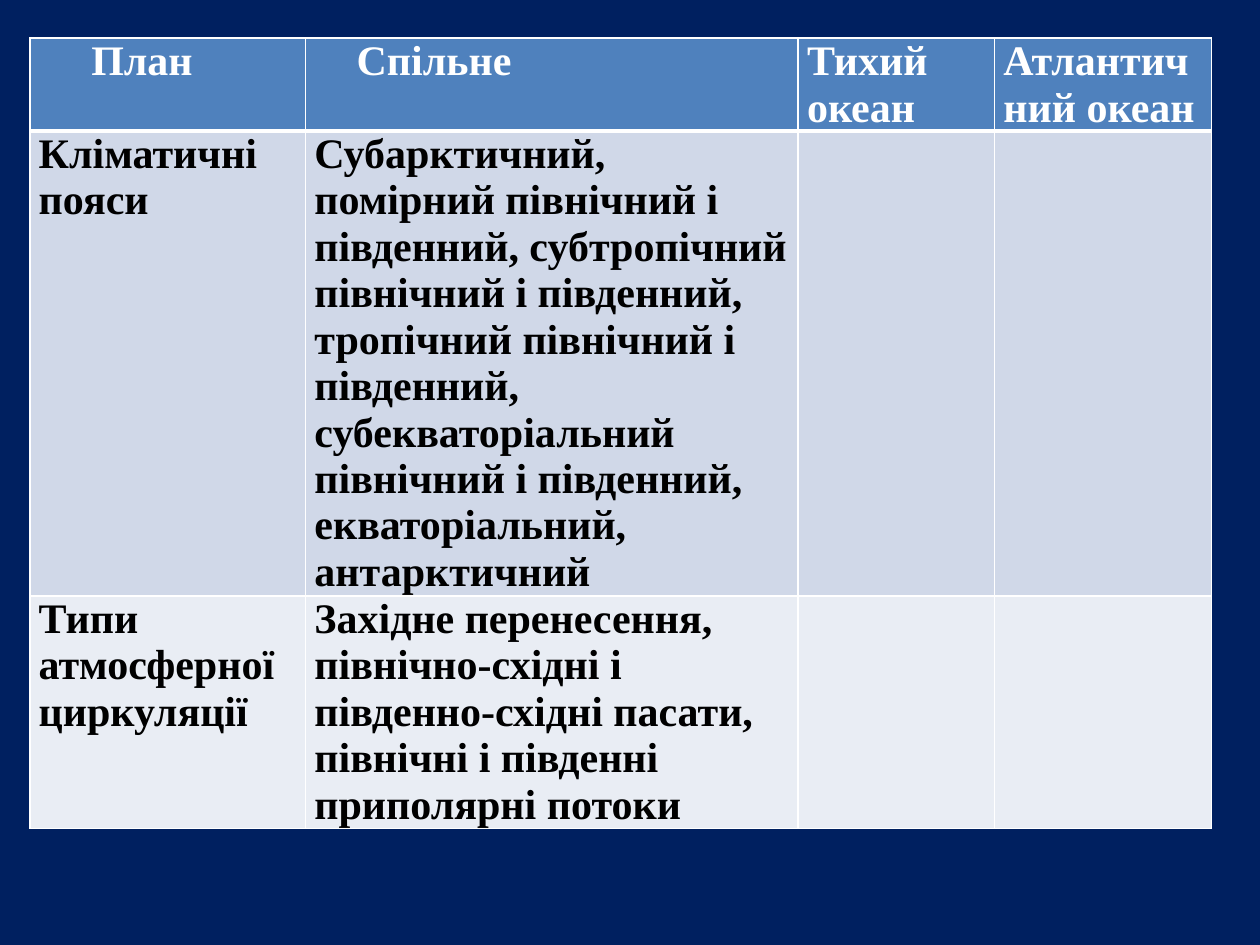
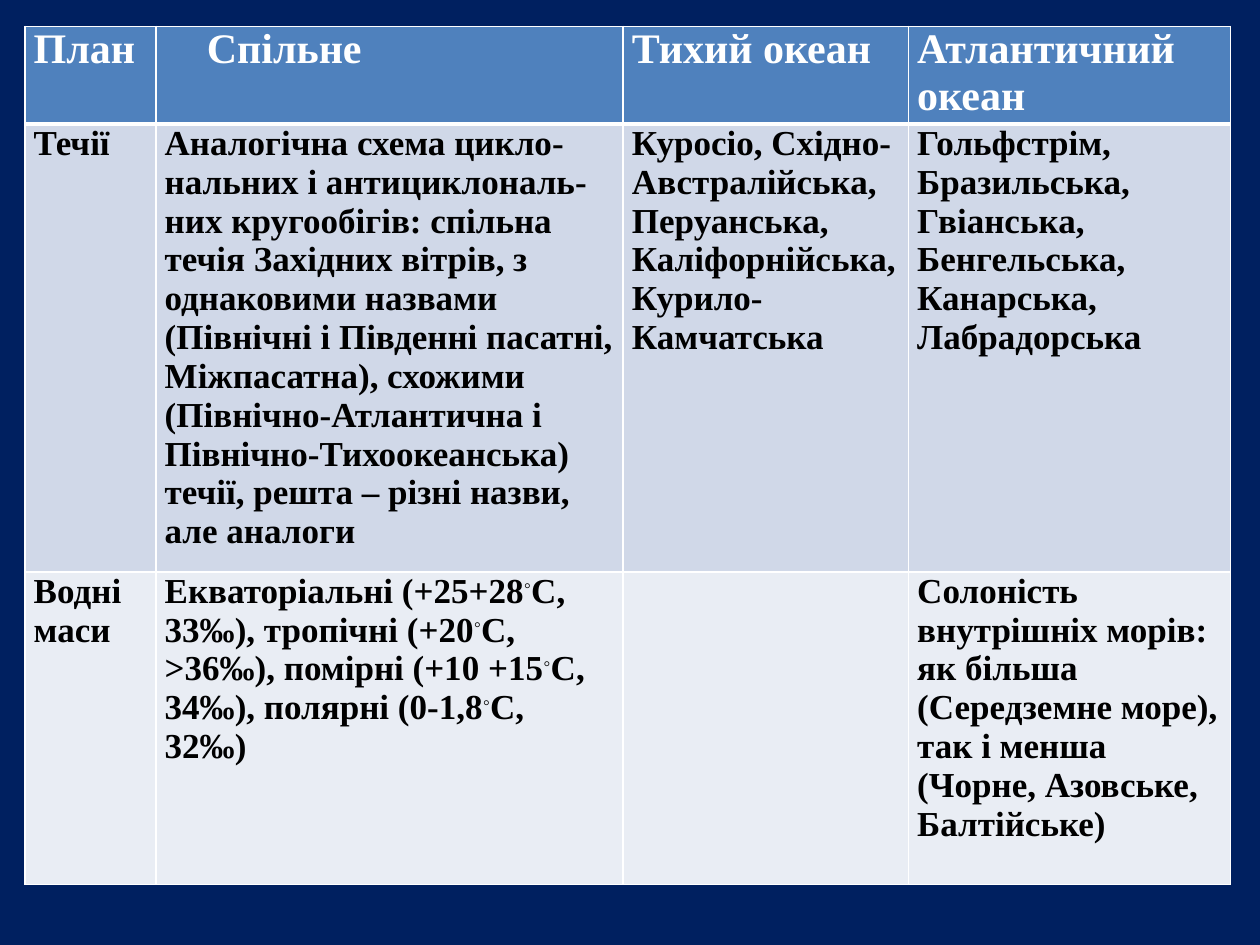
from lxml.etree import SubElement
from pptx import Presentation
from pptx.dml.color import RGBColor
from pptx.oxml.ns import qn
from pptx.util import Cm, Pt

FONT = "Times New Roman"
NAVY, BLUE, WHITE, BLACK = "002060", "4F81BD", "FFFFFF", "000000"
BANDS = ["D0D8E8", "E9EDF4"]
HEADINGS = ["План", "Спільне", "Тихий океан", "Атлантичний океан"]
HEADING_SIZE = 24
DEGREE = "◦"

CLIMATE_ROWS = [
    ["Кліматичні пояси",
     "Субарктичний, помірний північний і південний, субтропічний північний і "
     "південний, тропічний північний і південний, субекваторіальний північний "
     "і південний, екваторіальний, антарктичний", "", ""],
    ["Типи атмосферної циркуляції",
     "Західне перенесення, північно-східні і південно-східні пасати, "
     "північні і південні приполярні потоки", "", ""],
]
WATER_ROWS = [
    ["Течії",
     "Аналогічна схема цикло-нальних і антициклональ-них кругообігів: спільна "
     "течія Західних вітрів, з однаковими назвами (Північні і Південні "
     "пасатні, Міжпасатна), схожими  (Північно-Атлантична і "
     "Північно-Тихоокеанська) течії, решта – різні назви, але аналоги",
     "Куросіо, Східно-Австралійська, Перуанська, Каліфорнійська, "
     "Курило-Камчатська",
     "Гольфстрім, Бразильська, Гвіанська, Бенгельська, Канарська, "
     "Лабрадорська"],
    ["Водні маси",
     "Екваторіальні (+25+28◦С, 33‰), тропічні (+20◦С, >36‰), "
     "помірні (+10 +15◦С, 34‰), полярні (0-1,8◦С, 32‰)",
     "",
     "Солоність внутрішніх морів: як більша (Середземне море), так і менша "
     "(Чорне, Азовське, Балтійське)"],
]


def rgb(value):
    return RGBColor.from_string(value)


def write(cell, text, size=20, color=BLACK, indent=0):
    """Write bold text into a cell, raising each degree sign."""
    paragraph = cell.text_frame.paragraphs[0]
    if indent:
        paragraph._p.get_or_add_pPr().set("marL", str(Cm(indent)))
    for index, part in enumerate(text.split(DEGREE)):
        pieces = [part] if index == 0 else [DEGREE, part]
        for piece in pieces:
            run = paragraph.add_run()
            run.text = piece
            run.font.name = FONT
            run.font.size = Pt(size)
            run.font.bold = True
            run.font.color.rgb = rgb(color)
            if piece == DEGREE:
                run._r.get_or_add_rPr().set("baseline", "30000")


def paint(cell, fill, top=1, bottom=1):
    """Set a cell's margins, white borders (widths in points) and fill."""
    cell.margin_left = cell.margin_right = Cm(0.18)
    cell.margin_top = cell.margin_bottom = 0
    properties = cell._tc.get_or_add_tcPr()
    for side, width in (("L", 1), ("R", 1), ("T", top), ("B", bottom)):
        line = SubElement(properties, qn(f"a:ln{side}"), w=str(Pt(width)))
        solid = SubElement(line, qn("a:solidFill"))
        SubElement(solid, qn("a:srgbClr"), val=WHITE)
    cell.fill.solid()
    cell.fill.fore_color.rgb = rgb(fill)


def add_comparison(slide, body, left, top, widths, heights, size, indents):
    """Add a table that compares the two oceans under the shared headings."""
    table = slide.shapes.add_table(
        len(body) + 1, len(HEADINGS), Cm(left), Cm(top),
        Cm(sum(widths)), Cm(sum(heights))).table
    for column, width in zip(table.columns, widths):
        column.width = Cm(width)
    for row, height in zip(table.rows, heights):
        row.height = Cm(height)

    for column, (heading, indent) in enumerate(zip(HEADINGS, indents)):
        cell = table.cell(0, column)
        paint(cell, BLUE, bottom=3)
        write(cell, heading, size=HEADING_SIZE, color=WHITE, indent=indent)
    for row, (texts, band) in enumerate(zip(body, BANDS), start=1):
        for column, text in enumerate(texts):
            cell = table.cell(row, column)
            paint(cell, band, top=3 if row == 1 else 1)
            if text:
                write(cell, text, size=size)


def add_navy_slide(deck):
    slide = deck.slides.add_slide(deck.slide_layouts[6])
    slide.background.fill.solid()
    slide.background.fill.fore_color.rgb = rgb(NAVY)
    return slide


def main():
    deck = Presentation()
    deck.slide_width, deck.slide_height = Cm(25.4), Cm(19.05)
    add_comparison(add_navy_slide(deck), CLIMATE_ROWS, left=0.6, top=0.77,
                   widths=[5.56, 9.93, 3.96, 4.37],
                   heights=[1.87, 9.37, 4.69],
                   size=24, indents=[1.06, 0.85, 0, 0])
    add_comparison(add_navy_slide(deck), WATER_ROWS, left=0.5, top=0.53,
                   widths=[2.64, 9.42, 5.75, 6.5],
                   heights=[1.97, 9.03, 6.3],
                   size=20, indents=[0, 0.85, 0, 0])
    deck.save("out.pptx")


if __name__ == "__main__":
    main()
